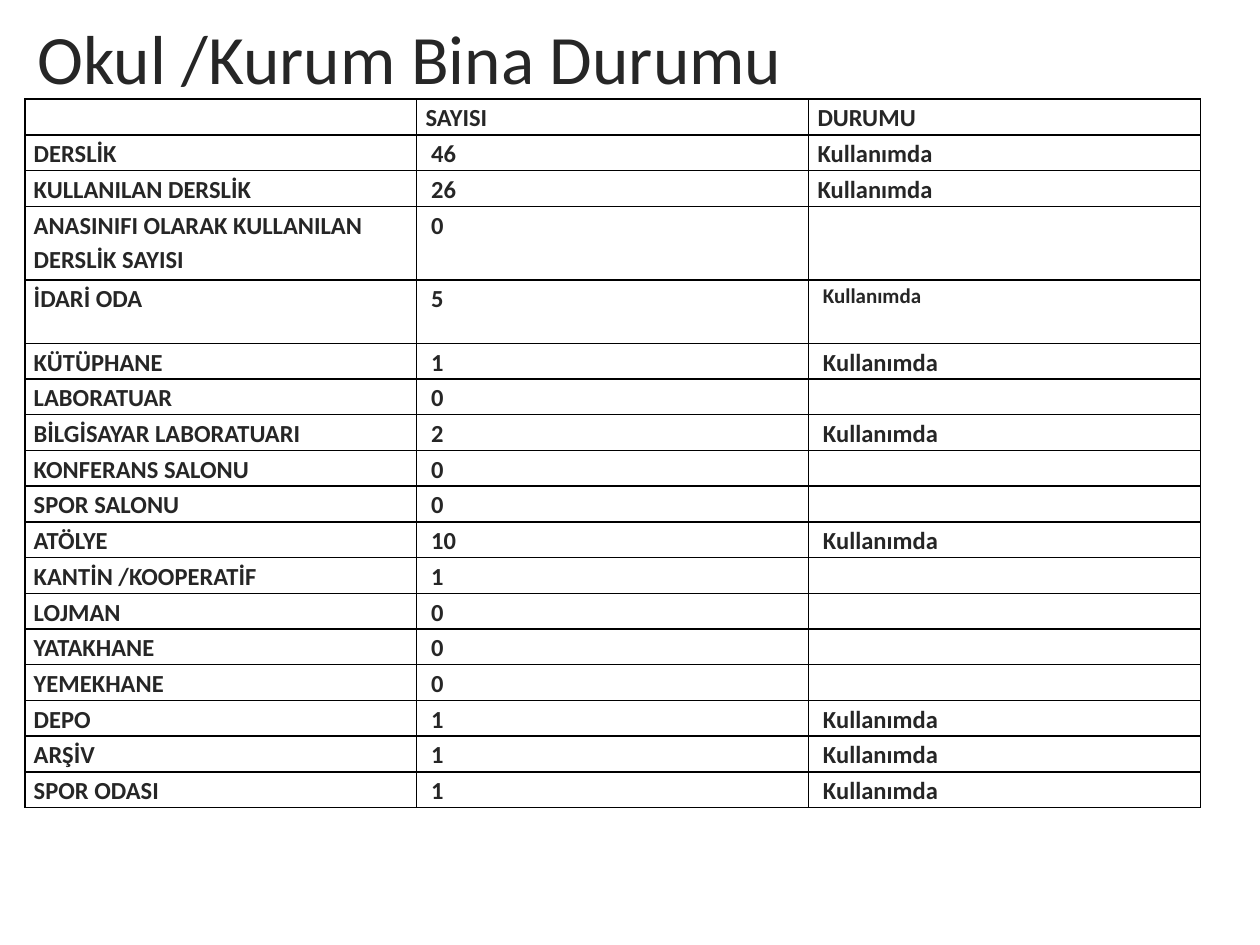
from dataclasses import dataclass

from lxml.etree import SubElement
from pptx import Presentation
from pptx.dml.color import RGBColor
from pptx.enum.text import MSO_ANCHOR, PP_ALIGN
from pptx.oxml.ns import qn
from pptx.util import Cm, Pt


@dataclass(frozen=True)
class Theme:
    font: str = "Calibri"
    text: RGBColor = RGBColor(0x26, 0x26, 0x26)
    border: str = "000000"
    title_size: float = 39.6
    cell_size: float = 14
    small_size: float = 12
    border_width: float = 1


THEME = Theme()
IN_USE = "Kullanımda"
HEADER = ("", "SAYISI", "DURUMU")
ROOMS = [
    ("DERSLİK", 46, IN_USE),
    ("KULLANILAN DERSLİK", 26, IN_USE),
    ("ANASINIFI OLARAK KULLANILAN DERSLİK SAYISI", 0, ""),
    ("İDARİ ODA", 5, IN_USE),
    ("KÜTÜPHANE", 1, IN_USE),
    ("LABORATUAR", 0, ""),
    ("BİLGİSAYAR LABORATUARI", 2, IN_USE),
    ("KONFERANS SALONU", 0, ""),
    ("SPOR SALONU", 0, ""),
    ("ATÖLYE", 10, IN_USE),
    ("KANTİN /KOOPERATİF", 1, ""),
    ("LOJMAN", 0, ""),
    ("YATAKHANE", 0, ""),
    ("YEMEKHANE", 0, ""),
    ("DEPO", 1, IN_USE),
    ("ARŞİV", 1, IN_USE),
    ("SPOR ODASI", 1, IN_USE),
]
ROW_HEIGHT = 0.72
TALL_ROWS = {3: 1.48, 4: 1.28}
SMALL_CELL = (4, 2)
MARGIN, INDENT = 0.18, 0.11
FIRST_INDENTED_STATUS = 4


def set_format(target, formats):
    for name, value in formats.items():
        setattr(target, name, value)


def font_format(size, bold):
    return {"name": THEME.font, "size": Pt(size), "bold": bold}


def add_borders(cell):
    tc_pr = cell._tc.get_or_add_tcPr()
    for side in ("lnL", "lnR", "lnT", "lnB"):
        ln = SubElement(tc_pr, qn(f"a:{side}"), w=str(Pt(THEME.border_width)))
        fill = SubElement(ln, qn("a:solidFill"))
        SubElement(fill, qn("a:srgbClr"), val=THEME.border)


def fill_cell(cell, text, size, indent):
    add_borders(cell)
    cell.fill.background()
    set_format(cell, {
        "margin_left": Cm(MARGIN + indent), "margin_right": Cm(MARGIN),
        "margin_top": 0, "margin_bottom": 0,
        "vertical_anchor": MSO_ANCHOR.TOP,
    })
    p = cell.text_frame.paragraphs[0]
    p.line_spacing = 1.15
    if text:
        r = p.add_run()
        r.text = text
        set_format(r.font, font_format(size, True))
        r.font.color.rgb = THEME.text
    else:  # an empty cell must not stretch its row
        SubElement(p._p, qn("a:endParaRPr"), sz=str(int(size * 100)))


def add_title(s, left, top, width, height):
    title = s.shapes.title
    set_format(title, {"left": Cm(left), "top": Cm(top),
                       "width": Cm(width), "height": Cm(height)})
    tf = title.text_frame
    set_format(tf, {"vertical_anchor": MSO_ANCHOR.MIDDLE, "word_wrap": True})
    p = tf.paragraphs[0]
    p.alignment = PP_ALIGN.LEFT
    r = p.add_run()
    r.text = "Okul /Kurum Bina Durumu"
    set_format(r.font, font_format(THEME.title_size, False))
    r.font.color.rgb = THEME.text


def add_room_table(s, left, top, width):
    rows = [HEADER, *ROOMS]
    heights = [TALL_ROWS.get(i, ROW_HEIGHT) for i in range(len(rows))]
    table = s.shapes.add_table(len(rows), len(HEADER), Cm(left), Cm(top),
                               Cm(width), Cm(sum(heights))).table
    set_format(table, {"first_row": False, "horz_banding": False})
    for column in table.columns:
        column.width = Cm(width / len(HEADER))
    for i, row in enumerate(rows):
        table.rows[i].height = Cm(heights[i])
        for j, value in enumerate(row):
            indented = (j == 1 and i > 0) or (j == 2 and i >= FIRST_INDENTED_STATUS)
            size = THEME.small_size if (i, j) == SMALL_CELL else THEME.cell_size
            fill_cell(table.cell(i, j), str(value), size, INDENT if indented else 0)


def main():
    prs = Presentation()
    set_format(prs, {"slide_width": Cm(25.4), "slide_height": Cm(19.05)})
    s = prs.slides.add_slide(prs.slide_layouts[5])
    add_title(s, 0.5, 0.2, 24.05, 1.9)
    add_room_table(s, 0.5, 2, 23.7)
    prs.save("out.pptx")


if __name__ == "__main__":
    main()
